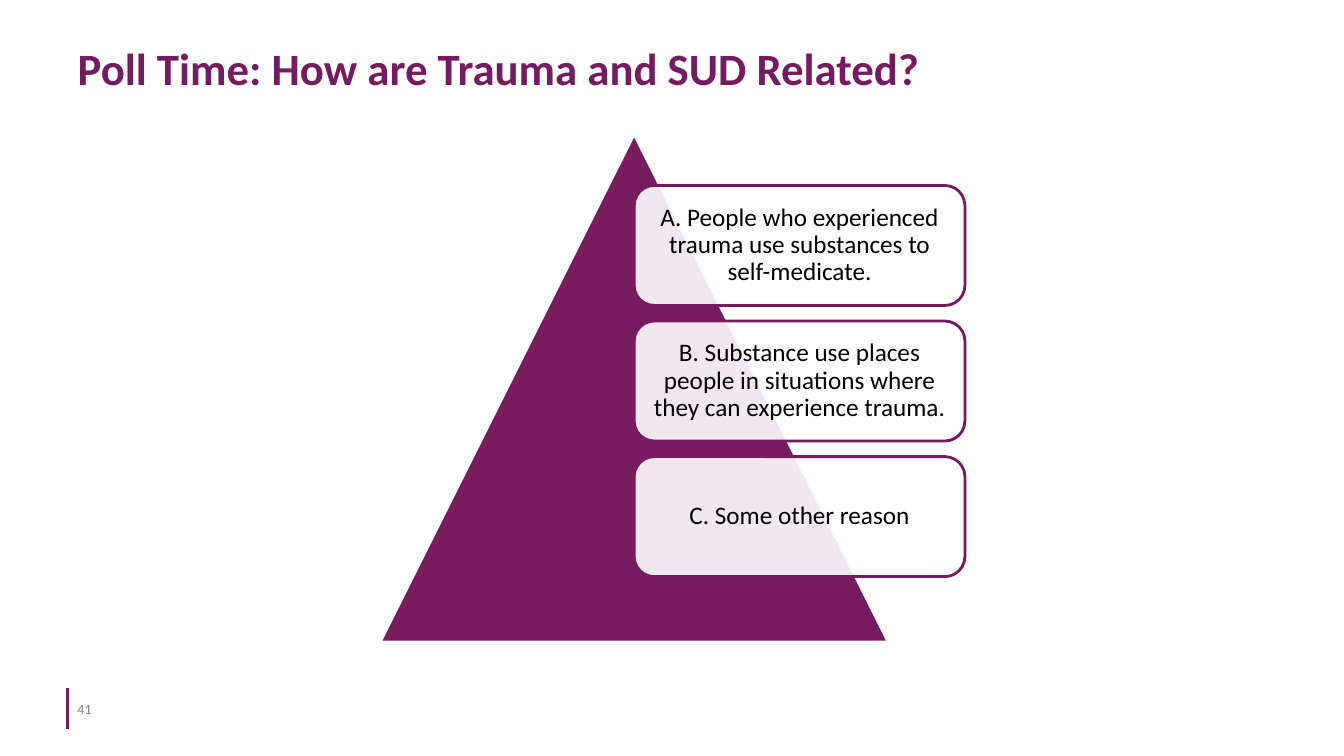
from lxml.etree import SubElement
from pptx import Presentation
from pptx.dml.color import RGBColor
from pptx.enum.shapes import MSO_CONNECTOR, MSO_SHAPE
from pptx.enum.text import MSO_ANCHOR, MSO_AUTO_SIZE, PP_ALIGN
from pptx.oxml.ns import qn
from pptx.util import Inches, Pt

PLUM = RGBColor(0x77, 0x1B, 0x61)
WHITE = RGBColor(0xFF, 0xFF, 0xFF)
BLACK = RGBColor(0x00, 0x00, 0x00)
GRAY = RGBColor(0x80, 0x80, 0x80)
FONT = "Calibri"

ANSWERS = [
    "A. People who experienced trauma use substances to self-medicate.",
    "B. Substance use places people in situations where they can experience trauma.",
    "C. Some other reason",
]


def place(box):
    return [Inches(n) for n in box]


def write(frame, text, size, color, align=PP_ALIGN.LEFT, bold=False):
    frame.word_wrap = True
    frame.auto_size = MSO_AUTO_SIZE.NONE
    frame.vertical_anchor = MSO_ANCHOR.MIDDLE
    frame.text = text
    para = frame.paragraphs[0]
    para.alignment = align
    font = para.font
    font.name, font.size, font.bold = FONT, Pt(size), bold
    font.color.rgb = color
    return para


def add_title(slide, text, box):
    title = slide.shapes.title
    title.left, title.top, title.width, title.height = place(box)
    write(title.text_frame, text, 32, PLUM, bold=True)


def add_shape(slide, kind, box, fill, line):
    shape = slide.shapes.add_shape(kind, *place(box))
    shape.shadow.inherit = False
    shape.fill.solid()
    shape.fill.fore_color.rgb = fill
    shape.line.color.rgb = line
    shape.line.width = Pt(2)
    return shape


def add_card(slide, text, box):
    """Add a rounded, slightly see-through answer box."""
    card = add_shape(slide, MSO_SHAPE.ROUNDED_RECTANGLE, box, WHITE, PLUM)
    color = card.fill._xPr.find(qn("a:solidFill"))[0]
    SubElement(color, qn("a:alpha"), val="90000")
    frame = card.text_frame
    frame.margin_left = frame.margin_right = Inches(0.07)
    frame.margin_top = frame.margin_bottom = Inches(0.07)
    para = write(frame, text, 18, BLACK, PP_ALIGN.CENTER)
    para.line_spacing = 0.9


def add_footer(slide, number, left, top, height):
    """Add the page number with the upright rule at its left."""
    rule = slide.shapes.add_connector(
        MSO_CONNECTOR.STRAIGHT, *place((left, top + height, left, top)))
    rule.line.color.rgb = PLUM
    rule.line.width = Pt(2.25)
    SubElement(rule._element.spPr, qn("a:effectLst"))
    label = slide.shapes.add_textbox(*place((left, top, 0.61, height)))
    write(label.text_frame, number, 10, GRAY)


def main():
    deck = Presentation()
    deck.slide_width, deck.slide_height = Inches(13.33), Inches(7.5)
    slide = deck.slides.add_slide(deck.slide_layouts[5])
    add_title(slide, "Poll Time: How are Trauma and SUD Related?",
              (0.67, 0.15, 12, 1.04))
    add_shape(slide, MSO_SHAPE.ISOSCELES_TRIANGLE,
              (3.77, 1.33, 5.04, 5.04), PLUM, WHITE)
    for i, answer in enumerate(ANSWERS):
        add_card(slide, answer, (6.29, 1.84 + 1.345 * i, 3.28, 1.19))
    add_footer(slide, "41", 0.67, 6.83, 0.4)
    deck.save("out.pptx")


if __name__ == "__main__":
    main()
